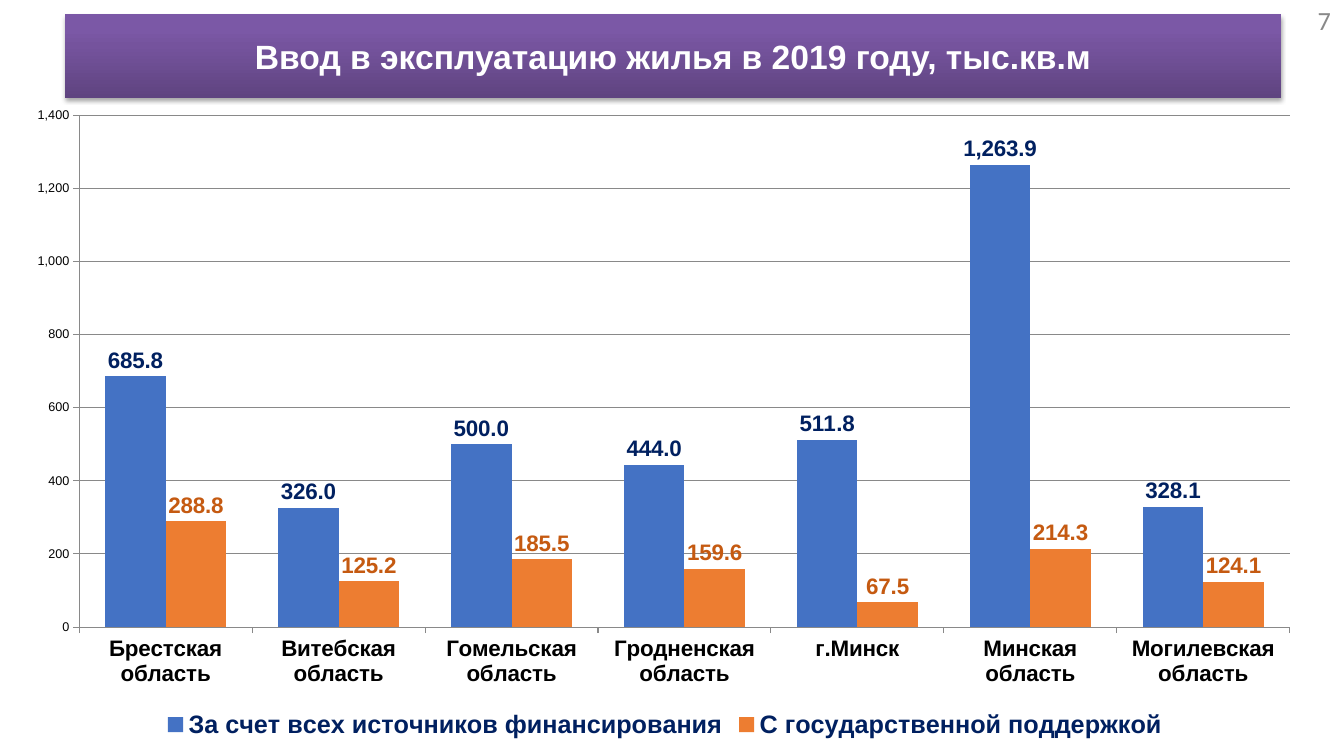
from lxml.etree import SubElement
from pptx import Presentation
from pptx.chart.data import CategoryChartData
from pptx.dml.color import RGBColor
from pptx.enum.chart import XL_CHART_TYPE, XL_LABEL_POSITION, XL_LEGEND_POSITION, XL_TICK_MARK
from pptx.enum.text import MSO_ANCHOR, MSO_AUTO_SIZE, PP_ALIGN
from pptx.oxml import parse_xml
from pptx.oxml.ns import nsdecls, qn
from pptx.util import Inches, Pt

REGIONS = ["Брестская область", "Витебская область", "Гомельская область",
           "Гродненская область", "г.Минск", "Минская область", "Могилевская область"]
# Series name, bar colour, label colour, values
HOUSING = [
    ("За счет всех источников финансирования", "4472C4", "002060",
     [685.8, 326, 500, 444, 511.8, 1263.9, 328.1]),
    ("С государственной поддержкой", "ED7D31", "C55A11",
     [288.8, 125.2, 185.5, 159.6, 67.5, 214.3, 124.1]),
]
TITLE_STOPS = [(0, "5F4480"), (63, "75539D"), (80, "7B58A6"), (100, "7C57A8")]


def color(value):
    return RGBColor.from_string(value)


class SlideBuilder:
    font_name = "Arial"
    grid_color = "898989"

    def __init__(self, slide):
        self.slide = slide

    def style(self, font, size, shade, bold=False, name=font_name):
        font.name, font.size, font.bold = name, Pt(size), bold
        font.color.rgb = color(shade)

    def add_text(self, box, text, align, *style, **options):
        frame = box.text_frame
        frame.word_wrap = True
        frame.auto_size = MSO_AUTO_SIZE.NONE
        frame.vertical_anchor = MSO_ANCHOR.MIDDLE
        para = frame.paragraphs[0]
        para.alignment = align
        span = para.add_run()
        span.text = text
        self.style(span.font, *style, **options)

    def title(self, text, left, top, width, height):
        box = self.slide.shapes.title
        box.left, box.top = Inches(left), Inches(top)
        box.width, box.height = Inches(width), Inches(height)
        self.add_text(box, text, PP_ALIGN.CENTER, 24, "FFFFFF", True)
        stops = "".join(f'<a:gs pos="{place * 1000}"><a:srgbClr val="{shade}"/></a:gs>'
                        for place, shade in TITLE_STOPS)
        properties = box.element.spPr
        for xml in (
            f'<a:prstGeom {nsdecls("a")} prst="rect"><a:avLst/></a:prstGeom>',
            f'<a:gradFill {nsdecls("a")} rotWithShape="1"><a:gsLst>{stops}</a:gsLst>'
            '<a:lin ang="16200000" scaled="0"/></a:gradFill>',
            f'<a:effectLst {nsdecls("a")}><a:outerShdw blurRad="{Pt(3.1)}" dist="{Pt(1.8)}" '
            'dir="5400000" rotWithShape="0"><a:srgbClr val="000000"><a:alpha val="35000"/>'
            '</a:srgbClr></a:outerShdw></a:effectLst>',
        ):
            properties.append(parse_xml(xml))

    def page_number(self, text, left, top, width, height):
        box = self.slide.shapes.add_textbox(Inches(left), Inches(top), Inches(width), Inches(height))
        frame = box.text_frame
        frame.margin_left = frame.margin_right = Inches(0.13)
        frame.margin_top = frame.margin_bottom = Inches(0.07)
        self.add_text(box, text, PP_ALIGN.RIGHT, 18.7, "898989", name="Calibri")

    def axis(self, axis, size, bold):
        self.style(axis.tick_labels.font, size, "000000", bold)
        axis.major_tick_mark = XL_TICK_MARK.OUTSIDE
        axis.minor_tick_mark = XL_TICK_MARK.NONE
        axis.format.line.color.rgb = color(self.grid_color)
        axis.format.line.width = Pt(0.75)

    def column_chart(self, left, top, width, height):
        data = CategoryChartData()
        data.categories = REGIONS
        for name, _, _, values in HOUSING:
            data.add_series(name, values)
        chart = self.slide.shapes.add_chart(
            XL_CHART_TYPE.COLUMN_CLUSTERED, Inches(left), Inches(top),
            Inches(width), Inches(height), data).chart
        self.style(chart.font, 18, "000000")
        chart.has_title = False

        # Axes and gridlines
        self.axis(chart.category_axis, 16, True)
        values_axis = chart.value_axis
        self.axis(values_axis, 9, False)
        values_axis.minimum_scale, values_axis.maximum_scale = 0, 1400
        values_axis.major_unit = 200
        values_axis.tick_labels.number_format = "#,##0"
        values_axis.tick_labels.number_format_is_linked = False
        values_axis.has_major_gridlines = True
        grid = values_axis.major_gridlines.format.line
        grid.color.rgb, grid.width = color(self.grid_color), Pt(0.75)

        # Legend
        chart.has_legend = True
        chart.legend.position = XL_LEGEND_POSITION.BOTTOM
        chart.legend.include_in_layout = False
        self.style(chart.legend.font, 18, "002060", True)

        # Columns and their labels
        plot = chart.plots[0]
        plot.gap_width, plot.overlap, plot.vary_by_categories = 86, 0, False
        for series, (_, bar_color, label_color, _) in zip(plot.series, HOUSING):
            series.format.fill.solid()
            series.format.fill.fore_color.rgb = color(bar_color)
            labels = series.data_labels
            labels.show_value = True
            labels.number_format, labels.number_format_is_linked = "#,##0.0", False
            labels.position = XL_LABEL_POSITION.OUTSIDE_END
            self.style(labels.font, 16, label_color, True)
        self.place_plot(chart, x=0.05, y=0.03, w=0.93, h=0.79)

    def place_plot(self, chart, **fractions):
        area = chart.element.find(".//" + qn("c:plotArea"))
        layout = area.find(qn("c:layout"))
        if layout is None:
            layout = parse_xml(f'<c:layout {nsdecls("c")}/>')
            area.insert(0, layout)
        manual = SubElement(layout, qn("c:manualLayout"))
        settings = {"layoutTarget": "inner", "xMode": "edge", "yMode": "edge", **fractions}
        for tag, value in settings.items():
            SubElement(manual, qn(f"c:{tag}")).set("val", str(value))


def main():
    deck = Presentation()
    deck.slide_width, deck.slide_height = Inches(13.33), Inches(7.5)
    page = SlideBuilder(deck.slides.add_slide(deck.slide_layouts[5]))
    page.title("Ввод в эксплуатацию жилья в 2019 году, тыс.кв.м", 0.64, 0.14, 12.07, 0.83)
    page.page_number("7", 10.22, 0, 3.11, 0.4)
    page.column_chart(0.14, 0.95, 12.91, 6.43)
    deck.save("out.pptx")


if __name__ == "__main__":
    main()
